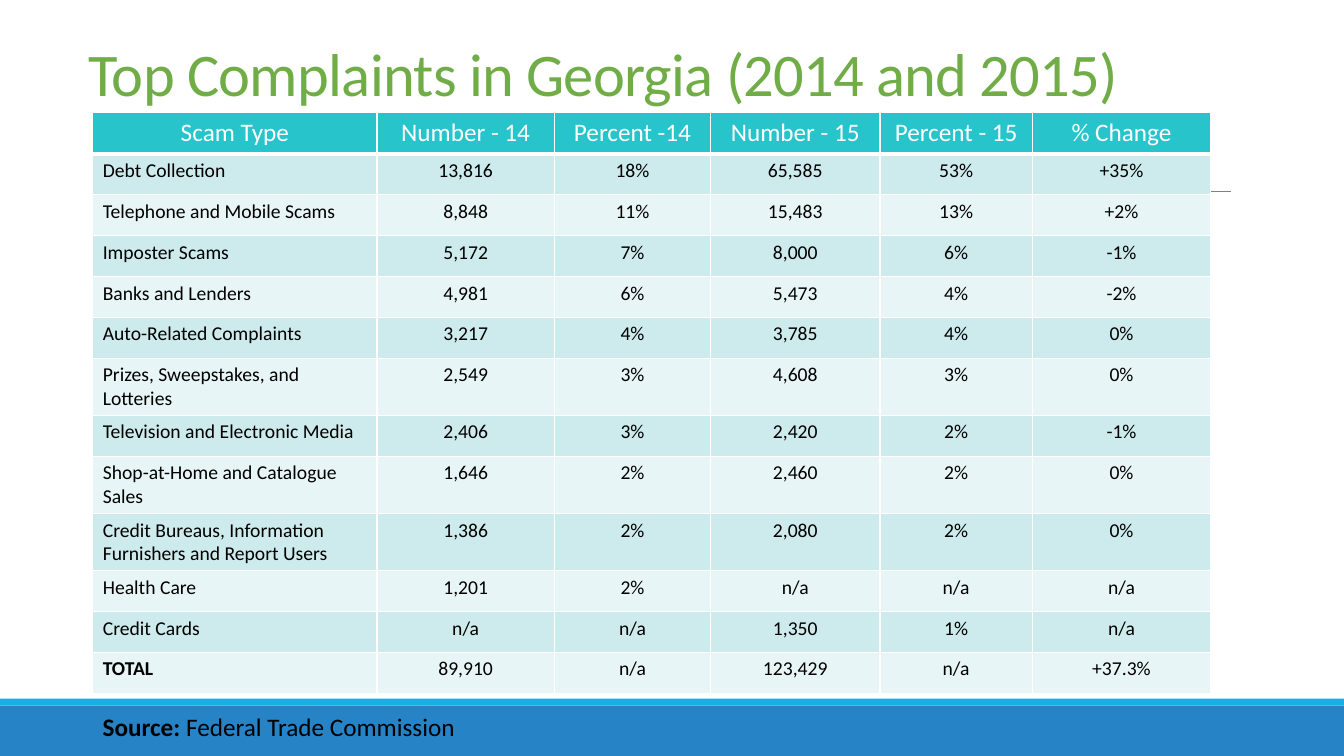
from dataclasses import dataclass

from lxml import etree
from pptx import Presentation, util as u
from pptx.dml.color import RGBColor
from pptx.enum import shapes as sh, text as tx
from pptx.oxml import ns

HUES = {
    "bar": "2683C6", "stripe": "1CADE4", "rule": "808080", "title": "70AD47",
    "head": "28C4CC", "odd": "CDEAEC", "even": "E8F5F6",
    "white": "FFFFFF", "black": "000000",
}
FONT = "Calibri"
WIDE, HIGH = u.Inches(13.33), u.Inches(7.5)

# Column widths and row height, in percent of the slide
COLS = [21.15, 13.2, 11.63, 12.6, 11.33, 13.28]
ROW = 5.41
DATA = [
    ["Scam Type", "Number - 14", "Percent -14", "Number - 15", "Percent - 15", "% Change"],
    ["Debt Collection", "13,816", "18%", "65,585", "53%", "+35%"],
    ["Telephone and Mobile Scams", "8,848", "11%", "15,483", "13%", "+2%"],
    ["Imposter Scams", "5,172", "7%", "8,000", "6%", "-1%"],
    ["Banks and Lenders", "4,981", "6%", "5,473", "4%", "-2%"],
    ["Auto-Related Complaints", "3,217", "4%", "3,785", "4%", "0%"],
    ["Prizes, Sweepstakes, and Lotteries", "2,549", "3%", "4,608", "3%", "0%"],
    ["Television and Electronic Media", "2,406", "3%", "2,420", "2%", "-1%"],
    ["Shop-at-Home and Catalogue Sales", "1,646", "2%", "2,460", "2%", "0%"],
    ["Credit Bureaus, Information Furnishers and Report Users",
     "1,386", "2%", "2,080", "2%", "0%"],
    ["Health Care", "1,201", "2%", "n/a", "n/a", "n/a"],
    ["Credit Cards", "n/a", "n/a", "1,350", "1%", "n/a"],
    ["TOTAL", "89,910", "n/a", "123,429", "n/a", "+37.3%"],
]


@dataclass
class Box:
    """An area in percent of the slide's width and height."""
    left: float
    top: float
    width: float
    height: float

    def area(self) -> tuple:
        return (across(self.left), down(self.top),
                across(self.width), down(self.height))


@dataclass
class Band:
    box: Box
    hue: str


BANDS = [
    Band(Box(0, 93.33, 100, 6.67), "bar"),
    Band(Box(0, 92.4, 100, 0.93), "stripe"),
]


def across(share: float) -> int:
    return round(WIDE * share / 100)


def down(share: float) -> int:
    return round(HIGH * share / 100)


def color(name: str) -> RGBColor:
    return RGBColor.from_string(HUES[name])


def style(run, size: float, hue: str, bold: bool = False) -> None:
    run.font.name, run.font.size, run.font.bold = FONT, u.Pt(size), bold
    run.font.color.rgb = color(hue)


def add_band(slide, band: Band) -> None:
    bar = slide.shapes.add_shape(sh.MSO_SHAPE.RECTANGLE, *band.box.area())
    bar.shadow.inherit = False
    bar.fill.solid()
    bar.fill.fore_color.rgb = color(band.hue)
    bar.line.fill.background()


def add_rule(slide, left: float, right: float, top: float) -> None:
    rule = slide.shapes.add_connector(
        sh.MSO_CONNECTOR.STRAIGHT, across(left), down(top), across(right), down(top))
    rule.line.color.rgb, rule.line.width = color("rule"), u.Pt(0.5)
    etree.SubElement(rule.element.spPr, ns.qn("a:effectLst"))


def add_text(slide, box: Box):
    frame = slide.shapes.add_textbox(*box.area()).text_frame
    frame.word_wrap = True
    return frame


def add_edges(cell, base: float) -> None:
    props = cell._tc.get_or_add_tcPr()
    sides = {"lnL": 1, "lnR": 1, "lnT": 1, "lnB": base}
    for spot, (side, width) in enumerate(sides.items()):
        line = etree.Element(ns.qn(f"a:{side}"), w=str(u.Pt(width)))
        fill = etree.SubElement(line, ns.qn("a:solidFill"))
        etree.SubElement(fill, ns.qn("a:srgbClr"), val=HUES["white"])
        props.insert(spot, line)


def fill_cell(cell, words: str, row: int, col: int) -> None:
    head = row == 0
    cell.fill.solid()
    cell.fill.fore_color.rgb = color("head" if head else "odd" if row % 2 else "even")
    add_edges(cell, 3 if head else 1)
    cell.text_frame.text = words
    para = cell.text_frame.paragraphs[0]
    if head or col:
        para.alignment = tx.PP_ALIGN.CENTER
    style(para.runs[0], 18 if head else 14, "white" if head else "black",
          words == "TOTAL")


def add_grid(slide, left: float, top: float) -> None:
    box = Box(left, top, sum(COLS), ROW * len(DATA))
    grid = slide.shapes.add_table(len(DATA), len(COLS), *box.area()).table
    for col, share in zip(grid.columns, COLS):
        col.width = across(share)
    for row, line in enumerate(DATA):
        grid.rows[row].height = down(ROW)
        for col, words in enumerate(line):
            fill_cell(grid.cell(row, col), words, row, col)


def main() -> None:
    deck = Presentation()
    deck.slide_width, deck.slide_height = WIDE, HIGH
    slide = deck.slides.add_slide(deck.slide_layouts[6])

    # Footer bands and rule
    for band in BANDS:
        add_band(slide, band)
    add_rule(slide, 9.83, 91.6, 25.33)

    # Title
    frame = add_text(slide, Box(5.85, 5.33, 86.27, 9.73))
    frame.vertical_anchor = tx.MSO_ANCHOR.BOTTOM
    frame.text = "Top Complaints in Georgia (2014 and 2015)"
    para = frame.paragraphs[0]
    para.line_spacing = 0.85
    style(para.runs[0], 43.2, "title")
    para.runs[0].font._element.set("spc", "-50")

    # Complaints table
    add_grid(slide, 6.9, 14.93)

    # Source
    frame = add_text(slide, Box(6.9, 93.47, 39.53, 5.47))
    frame.auto_size = tx.MSO_AUTO_SIZE.SHAPE_TO_FIT_TEXT
    frame.text = "Source: "
    para = frame.paragraphs[0]
    style(para.runs[0], 18, "black", True)
    name = para.add_run()
    name.text = "Federal Trade Commission"
    style(name, 18, "black")

    deck.save("out.pptx")


if __name__ == "__main__":
    main()
